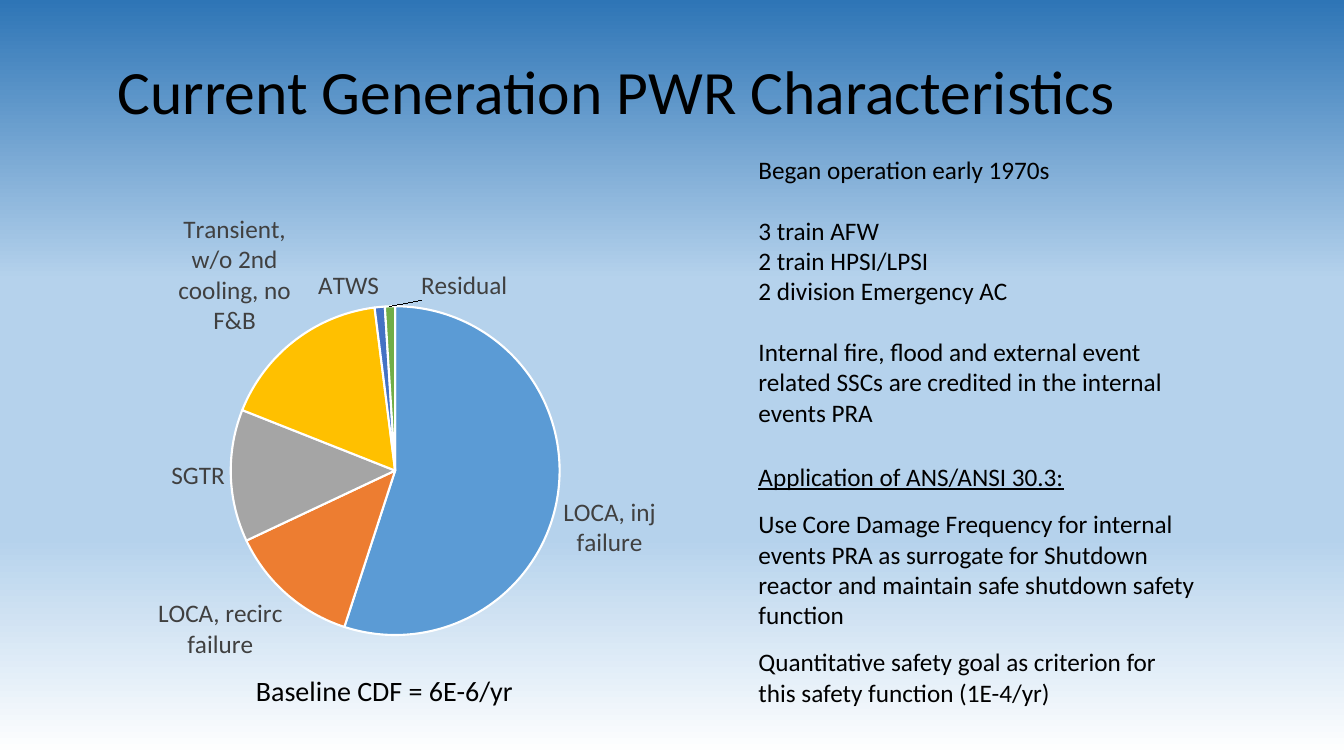
from copy import deepcopy

from lxml.etree import SubElement
from pptx import Presentation
from pptx.chart.data import CategoryChartData
from pptx.dml.color import RGBColor
from pptx.enum.chart import XL_CHART_TYPE, XL_LABEL_POSITION
from pptx.enum.text import MSO_ANCHOR
from pptx.oxml import parse_xml
from pptx.oxml.ns import nsdecls, qn
from pptx.util import Inches, Pt

FONT = "Calibri"
BLACK = RGBColor(0x00, 0x00, 0x00)
WHITE = RGBColor(0xFF, 0xFF, 0xFF)
LABEL_GRAY = RGBColor(0x40, 0x40, 0x40)
DEEP_BLUE = RGBColor(0x2E, 0x75, 0xB6)
PALE_BLUE = RGBColor(0xB5, 0xD2, 0xEC)
BACKGROUND_STOPS = [(0, DEEP_BLUE), (37, PALE_BLUE), (71, PALE_BLUE), (100, WHITE)]

SLIDE_WIDTH = Inches(13.33)
SLIDE_HEIGHT = Inches(7.5)
LINE_GAP = 22
SMALL_GAP = 12.2

CONTRIBUTORS = [
    ("LOCA, inj failure", 55, RGBColor(0x5B, 0x9B, 0xD5)),
    ("LOCA, recirc failure", 13, RGBColor(0xED, 0x7D, 0x31)),
    ("SGTR", 13, RGBColor(0xA5, 0xA5, 0xA5)),
    ("Transient, w/o 2nd cooling, no F&B", 17, RGBColor(0xFF, 0xC0, 0x00)),
    ("ATWS", 1, RGBColor(0x44, 0x72, 0xC4)),
    ("Residual", 1, RGBColor(0x70, 0xAD, 0x47)),
]
CHARACTERISTICS = [
    ("Began operation early 1970s", 0, False),
    ("3 train AFW", LINE_GAP, False),
    ("2 train HPSI/LPSI", 0, False),
    ("2 division Emergency AC", 0, False),
    ("Internal fire, flood and external event related SSCs are credited "
     "in the internal events PRA", LINE_GAP, False),
    ("Application of ANS/ANSI 30.3:", 2 * SMALL_GAP, True),
    ("Use Core Damage Frequency for internal events PRA as surrogate for "
     "Shutdown reactor and maintain safe shutdown safety function", SMALL_GAP, False),
    ("Quantitative safety goal as criterion for this safety function (1E-4/yr)",
     SMALL_GAP, False),
]


def place(left, top, width, height):
    return (int(SLIDE_WIDTH * left), int(SLIDE_HEIGHT * top),
            int(SLIDE_WIDTH * width), int(SLIDE_HEIGHT * height))


def style_font(font, size, color):
    font.name = FONT
    font.size = Pt(size)
    font.color.rgb = color


def paint_background(slide):
    fill = slide.background.fill
    fill.gradient()
    fill.gradient_angle = 270
    stop_list = fill.gradient_stops[0]._gs.getparent()
    for _ in range(len(BACKGROUND_STOPS) - len(stop_list)):
        stop_list.append(deepcopy(stop_list[0]))
    for stop, (percent, color) in zip(fill.gradient_stops, BACKGROUND_STOPS):
        stop.position = percent / 100
        stop.color.rgb = color


def add_text(slide, box, paragraphs, size, anchor=MSO_ANCHOR.TOP, line_spacing=1.0):
    frame = slide.shapes.add_textbox(*place(*box)).text_frame
    frame.word_wrap = True
    frame.vertical_anchor = anchor
    for index, (text, gap, underline) in enumerate(paragraphs):
        paragraph = frame.paragraphs[0] if index == 0 else frame.add_paragraph()
        paragraph.space_before = Pt(gap)
        paragraph.line_spacing = line_spacing
        run = paragraph.add_run()
        run.text = text
        style_font(run.font, size, BLACK)
        run.font.underline = underline


def add_layout(parent, position, **shares):
    layout = parse_xml(f"<c:layout {nsdecls('c')}/>")
    manual = SubElement(layout, qn("c:manualLayout"))
    for name, value in shares.items():
        SubElement(manual, qn(f"c:{name}")).set("val", str(value))
    for old in parent.findall(qn("c:layout")):
        parent.remove(old)
    parent.insert(position, layout)


def shift_label(point, horizontal, vertical):
    label = point.data_label
    style_font(label.font, 18, LABEL_GRAY)
    label.position = XL_LABEL_POSITION.OUTSIDE_END
    element = label._dLbl
    element.find(qn("c:showVal")).set("val", "0")
    element.find(qn("c:showCatName")).set("val", "1")
    add_layout(element, 1, x=horizontal, y=vertical)


def add_pie(slide, box):
    data = CategoryChartData()
    data.categories = [name for name, _, _ in CONTRIBUTORS]
    data.add_series("Series 1", [value for _, value, _ in CONTRIBUTORS])
    chart = slide.shapes.add_chart(XL_CHART_TYPE.PIE, *place(*box), data).chart
    chart.has_legend = False
    chart.has_title = False
    style_font(chart.font, 10, BLACK)
    plot = chart.plots[0]
    plot.vary_by_categories = True
    series = plot.series[0]
    for index, (_, _, color) in enumerate(CONTRIBUTORS):
        wedge = series.points[index].format
        wedge.fill.solid()
        wedge.fill.fore_color.rgb = color
        wedge.line.color.rgb = WHITE
        wedge.line.width = Pt(1.5)
    labels = series.data_labels
    labels.show_value = False
    labels.show_category_name = True
    labels.position = XL_LABEL_POSITION.OUTSIDE_END
    style_font(labels.font, 18, LABEL_GRAY)
    shift_label(series.points[len(CONTRIBUTORS) - 1], 0.11, 0)
    plot_area = chart._chartSpace.chart.plotArea
    add_layout(plot_area, 0, layoutTarget="inner", xMode="edge", yMode="edge",
               x=0.27, y=0.24, w=0.49, h=0.66)


def main():
    presentation = Presentation()
    presentation.slide_width = SLIDE_WIDTH
    presentation.slide_height = SLIDE_HEIGHT
    slide = presentation.slides.add_slide(presentation.slide_layouts[6])
    paint_background(slide)
    add_text(slide, (0.08, 0.03, 0.86, 0.19),
             [("Current Generation PWR Characteristics", 0, False)],
             44, MSO_ANCHOR.MIDDLE, 0.9)
    add_text(slide, (0.557, 0.197, 0.34, 0.75), CHARACTERISTICS, 18)
    add_pie(slide, (0.035, 0.247, 0.503, 0.659))
    add_text(slide, (0.183, 0.885, 0.26, 0.063),
             [("Baseline CDF = 6E-6/yr", 0, False)], 20)
    presentation.save("out.pptx")


if __name__ == "__main__":
    main()
